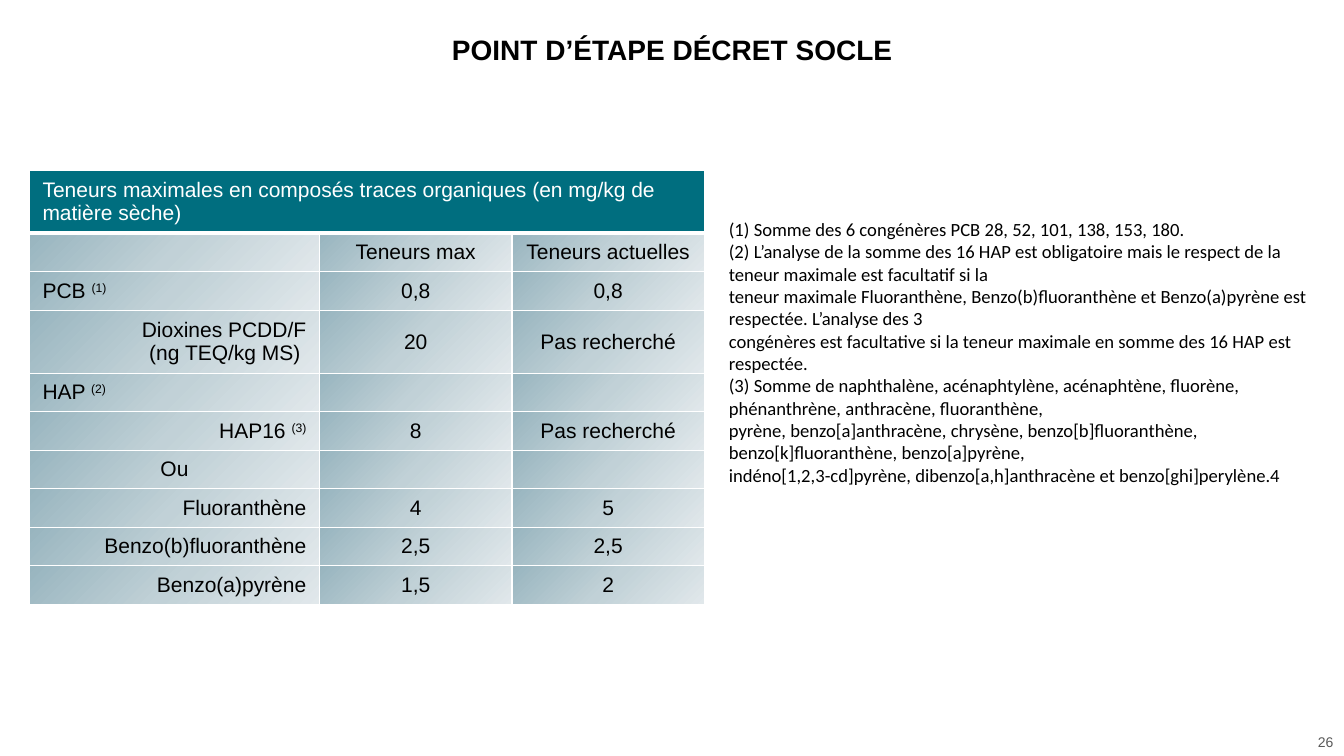
from dataclasses import dataclass

from lxml.etree import SubElement
from pptx import Presentation
from pptx.dml.color import RGBColor
from pptx.enum.text import MSO_ANCHOR, MSO_AUTO_SIZE, PP_ALIGN
from pptx.oxml.ns import qn
from pptx.util import Pt


@dataclass(frozen=True)
class Theme:
    black: str = "000000"
    white: str = "FFFFFF"
    grey: str = "595959"
    teal: str = "006E7F"
    gradient: tuple = ((0, "98B5BF"), (50, "C1D1D7"), (100, "E1E8EB"))
    sans: str = "Arial"
    remark_font: str = "Calibri"
    title_size: float = 20
    table_size: float = 15
    remark_size: float = 13.3
    number_size: float = 10


THEME = Theme()
LEFT, CENTER, RIGHT = PP_ALIGN.LEFT, PP_ALIGN.CENTER, PP_ALIGN.RIGHT

HEADING = "Teneurs maximales en composés traces organiques (en mg/kg de matière sèche)"

# Label, its alignment, its superscript mark, maximum and current content
ROWS = [
    ("", LEFT, "", "Teneurs max", "Teneurs actuelles"),
    ("PCB ", LEFT, "(1)", "0,8", "0,8"),
    ("Dioxines PCDD/F\n(ng TEQ/kg MS) ", RIGHT, "", "20", "Pas recherché"),
    ("HAP ", LEFT, "(2)", "", ""),
    ("HAP16 ", RIGHT, "(3)", "8", "Pas recherché"),
    ("Ou", CENTER, "", "", ""),
    ("Fluoranthène", RIGHT, "", "4", "5"),
    ("Benzo(b)fluoranthène", RIGHT, "", "2,5", "2,5"),
    ("Benzo(a)pyrène", RIGHT, "", "1,5", "2"),
]
COLUMN_WIDTHS = (207.2, 137.5, 137.5)
SINGLE_ROW, DOUBLE_ROW = 27.5, 45

REMARKS = """(1) Somme des 6 congénères PCB 28, 52, 101, 138, 153, 180.
(2) L’analyse de la somme des 16 HAP est obligatoire mais le respect de la teneur maximale est facultatif si la
teneur maximale Fluoranthène, Benzo(b)fluoranthène et Benzo(a)pyrène est respectée. L’analyse des 3
congénères est facultative si la teneur maximale en somme des 16 HAP est respectée.
(3) Somme de naphthalène, acénaphtylène, acénaphtène, fluorène, phénanthrène, anthracène, fluoranthène,
pyrène, benzo[a]anthracène, chrysène, benzo[b]fluoranthène, benzo[k]fluoranthène, benzo[a]pyrène,
indéno[1,2,3-cd]pyrène, dibenzo[a,h]anthracène et benzo[ghi]perylène.4"""


def write_text(frame, text, *, size, font=THEME.sans, color=THEME.black,
               bold=False, align=LEFT, spacing=None, mark=""):
    """Write one paragraph per line; mark is a superscript after the last."""
    lines = text.split("\n")
    for index, line in enumerate(lines):
        para = frame.paragraphs[0] if index == 0 else frame.add_paragraph()
        para.alignment = align
        if spacing:
            para.line_spacing = spacing
        is_last = index == len(lines) - 1
        pieces = [(line, False)] + ([(mark, True)] if mark and is_last else [])
        for piece, raised in pieces:
            span = para.add_run()
            span.text = piece
            span.font.name = font
            span.font.size = Pt(size)
            span.font.bold = bold
            span.font.color.rgb = RGBColor.from_string(color)
            if raised:
                span._r.get_or_add_rPr().set("baseline", "30000")


def add_text_box(page, text, left, top, width, height, *, inset=3,
                 anchor=MSO_ANCHOR.MIDDLE, grow=False, **text_format):
    box = page.shapes.add_textbox(Pt(left), Pt(top), Pt(width), Pt(height))
    frame = box.text_frame
    frame.word_wrap = True
    frame.auto_size = MSO_AUTO_SIZE.SHAPE_TO_FIT_TEXT if grow else MSO_AUTO_SIZE.NONE
    frame.vertical_anchor = anchor
    frame.margin_left = frame.margin_right = Pt(inset)
    frame.margin_top = frame.margin_bottom = Pt(inset)
    write_text(frame, text, **text_format)


def add_color(parent, color):
    SubElement(parent, qn("a:srgbClr"), val=color)


def set_borders(cell, bottom=1):
    properties = cell._tc.get_or_add_tcPr()
    for side, width in (("L", 1), ("R", 1), ("T", 1), ("B", bottom)):
        line = SubElement(properties, qn(f"a:ln{side}"), w=str(Pt(width)))
        add_color(SubElement(line, qn("a:solidFill")), THEME.white)


def set_gradient(cell):
    properties = cell._tc.get_or_add_tcPr()
    fill = SubElement(properties, qn("a:gradFill"), rotWithShape="1")
    stops = SubElement(fill, qn("a:gsLst"))
    for percent, color in THEME.gradient:
        add_color(SubElement(stops, qn("a:gs"), pos=str(percent * 1000)), color)
    SubElement(fill, qn("a:lin"), ang=str(45 * 60000), scaled="0")


def fill_cell(cell, text, **text_format):
    cell.vertical_anchor = MSO_ANCHOR.MIDDLE
    cell.margin_left = cell.margin_right = Pt(9.4)
    cell.margin_top = cell.margin_bottom = Pt(5 if text else 0)
    if text:
        write_text(cell.text_frame, text, size=THEME.table_size, **text_format)


def add_content_table(page, left, top):
    heights = [DOUBLE_ROW] + [DOUBLE_ROW if "\n" in row[0] else SINGLE_ROW for row in ROWS]
    table = page.shapes.add_table(
        len(heights), len(COLUMN_WIDTHS), Pt(left), Pt(top),
        Pt(sum(COLUMN_WIDTHS)), Pt(sum(heights))).table
    table.first_row = table.horz_banding = False
    for column, width in zip(table.columns, COLUMN_WIDTHS):
        column.width = Pt(width)
    for row, height in zip(table.rows, heights):
        row.height = Pt(height)

    # Heading across all columns
    heading = table.cell(0, 0)
    heading.merge(table.cell(0, len(COLUMN_WIDTHS) - 1))
    fill_cell(heading, HEADING, color=THEME.white)
    for cell in table.rows[0].cells:
        set_borders(cell, bottom=3)
        cell.fill.solid()
        cell.fill.fore_color.rgb = RGBColor.from_string(THEME.teal)

    # Body rows
    for index, (label, align, mark, *values) in enumerate(ROWS, start=1):
        fill_cell(table.cell(index, 0), label, align=align, mark=mark)
        for column, value in enumerate(values, start=1):
            fill_cell(table.cell(index, column), value, align=CENTER)
        for cell in table.rows[index].cells:
            set_borders(cell)
            set_gradient(cell)


def main():
    deck = Presentation()
    deck.slide_width, deck.slide_height = Pt(960), Pt(540)
    page = deck.slides.add_slide(deck.slide_layouts[6])

    # Title
    add_text_box(page, "POINT D’ÉTAPE DÉCRET SOCLE", 145.4, 4.3, 669.6, 65.5,
                 size=THEME.title_size, bold=True, align=CENTER, spacing=0.9)

    # Table of trace compounds
    add_content_table(page, 21, 121.7)

    # Remarks on the table
    add_text_box(page, REMARKS, 517, 152, 422, 201.6, inset=3.6,
                 anchor=MSO_ANCHOR.TOP, grow=True,
                 size=THEME.remark_size, font=THEME.remark_font)

    # Page number
    add_text_box(page, "26", 848.2, 522, 107.3, 15.8,
                 size=THEME.number_size, color=THEME.grey, align=RIGHT)

    deck.save("out.pptx")


if __name__ == "__main__":
    main()
